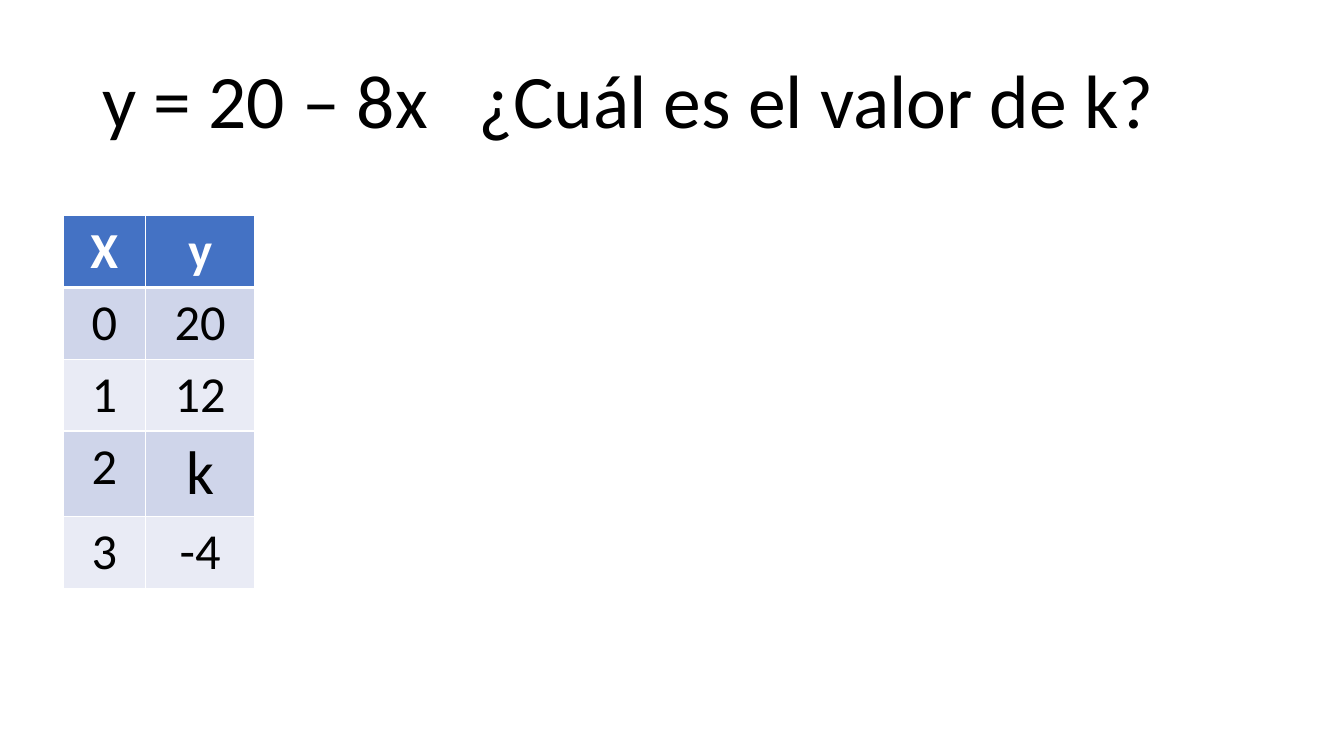
from dataclasses import dataclass

from lxml import etree
from pptx import Presentation
from pptx.dml.color import RGBColor
from pptx.enum.text import MSO_ANCHOR, MSO_AUTO_SIZE, PP_ALIGN
from pptx.oxml.ns import qn
from pptx.util import Pt

LEFT, CENTER = PP_ALIGN.LEFT, PP_ALIGN.CENTER
MIDDLE = MSO_ANCHOR.MIDDLE
NO_AUTOFIT = MSO_AUTO_SIZE.NONE
TITLE_ONLY_LAYOUT = 5


@dataclass(frozen=True)
class Theme:
    font: str = "Calibri"
    text: str = "000000"
    white: str = "FFFFFF"
    header: str = "4472C4"
    bands: tuple = ("CFD5EA", "E9EBF5")
    title_size: int = 54
    table_size: int = 36
    unknown_size: int = 44


class SlideBuilder:
    def __init__(self, slide, theme):
        self.slide = slide
        self.theme = theme

    def add_run(self, paragraph, text, size, color, bold=False):
        run = paragraph.add_run()
        run.text = text
        run.font.name = self.theme.font
        run.font.size = Pt(size)
        run.font.bold = bold
        run.font.color.rgb = RGBColor.from_string(color)

    def title(self, equation, question, left, top, width, height, question_indent):
        shape = self.slide.shapes.title
        shape.left, shape.top = Pt(left), Pt(top)
        shape.width, shape.height = Pt(width), Pt(height)
        frame = shape.text_frame
        frame.word_wrap = True
        frame.auto_size = NO_AUTOFIT
        frame.vertical_anchor = MIDDLE
        paragraph = frame.paragraphs[0]
        paragraph.alignment = LEFT
        paragraph.line_spacing = 0.9
        # A tab stop sets the question apart from the equation
        properties = paragraph._p.get_or_add_pPr()
        tabs = etree.SubElement(properties, qn("a:tabLst"))
        etree.SubElement(tabs, qn("a:tab"), pos=str(Pt(question_indent)), algn="l")
        for text in (equation, "\t" + question):
            self.add_run(paragraph, text, self.theme.title_size, self.theme.text)

    def cell_border(self, cell, side, width):
        properties = cell._tc.get_or_add_tcPr()
        line = etree.SubElement(properties, qn("a:ln" + side), w=str(Pt(width)))
        fill = etree.SubElement(line, qn("a:solidFill"))
        etree.SubElement(fill, qn("a:srgbClr"), val=self.theme.white)

    def table(self, rows, left, top, column_widths, row_heights):
        theme = self.theme
        shape = self.slide.shapes.add_table(
            len(rows), len(column_widths), Pt(left), Pt(top),
            Pt(sum(column_widths)), Pt(sum(row_heights)))
        table = shape.table
        for column, width in zip(table.columns, column_widths):
            column.width = Pt(width)
        for row_index, values in enumerate(rows):
            table.rows[row_index].height = Pt(row_heights[row_index])
            is_header = row_index == 0
            fill = theme.header if is_header else theme.bands[(row_index - 1) % 2]
            color = theme.white if is_header else theme.text
            widths = {"L": 1, "R": 1, "T": 3 if row_index == 1 else 1,
                      "B": 3 if is_header else 1}
            for column_index, value in enumerate(values):
                cell = table.cell(row_index, column_index)
                for side, width in widths.items():
                    self.cell_border(cell, side, width)
                cell.fill.solid()
                cell.fill.fore_color.rgb = RGBColor.from_string(fill)
                paragraph = cell.text_frame.paragraphs[0]
                paragraph.alignment = CENTER
                size = theme.unknown_size if value == "k" else theme.table_size
                self.add_run(paragraph, value, size, color, is_header)


def main():
    presentation = Presentation()
    presentation.slide_width, presentation.slide_height = Pt(960), Pt(540)
    slide = presentation.slides.add_slide(
        presentation.slide_layouts[TITLE_ONLY_LAYOUT])
    builder = SlideBuilder(slide, Theme())

    # Equation and question
    builder.title("y = 20 – 8x", "¿Cuál es el valor de k?",
                  left=66, top=28.75, width=828, height=90.75, question_indent=268.5)

    # Table of values
    values = [("X", "y"), ("0", "20"), ("1", "12"), ("2", "k"), ("3", "-4")]
    row_heights = [61 if "k" in row else 51 for row in values]
    builder.table(values, left=45, top=154, column_widths=(59, 78),
                  row_heights=row_heights)

    presentation.save("out.pptx")


if __name__ == "__main__":
    main()
